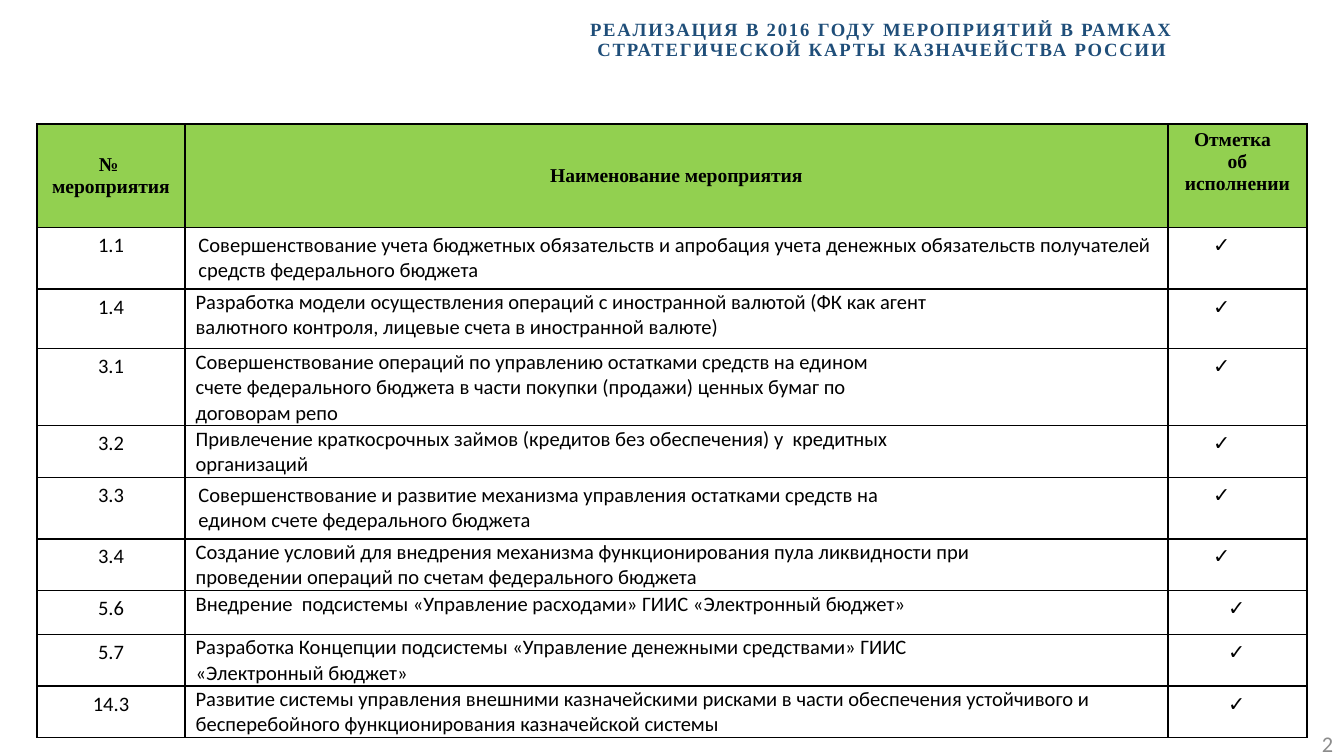
from dataclasses import dataclass

from lxml import etree
from pptx import Presentation
from pptx.dml.color import RGBColor
from pptx.enum.text import MSO_ANCHOR, PP_ALIGN
from pptx.oxml.ns import qn
from pptx.util import Pt

LEFT, CENTER, RIGHT, JUSTIFY = PP_ALIGN.LEFT, PP_ALIGN.CENTER, PP_ALIGN.RIGHT, PP_ALIGN.JUSTIFY
TOP, MIDDLE = MSO_ANCHOR.TOP, MSO_ANCHOR.MIDDLE


@dataclass(frozen=True)
class Theme:
    heading_font: str = "Times New Roman"
    body_font: str = "Calibri"
    title_color: str = "1F4E79"
    text_color: str = "000000"
    number_color: str = "8C8C8C"
    header_fill: str = "92D050"
    title_size: float = 10
    header_size: float = 10.5
    body_size: float = 11
    number_size: float = 12


THEME = Theme()

TITLE = "РЕАЛИЗАЦИЯ В 2016 ГОДУ МЕРОПРИЯТИЙ В РАМКАХ СТРАТЕГИЧЕСКОЙ КАРТЫ КАЗНАЧЕЙСТВА РОССИИ"
PAGE_NUMBER = "2"
CHECK = "✓"

# Header lines and vertical anchor
HEADERS = [
    (["№ ", "мероприятия"], MIDDLE),
    (["Наименование мероприятия"], MIDDLE),
    (["Отметка  ", "об исполнении"], TOP),
]
HEADER_HEIGHT = 55.5
COLUMN_WIDTHS = [79.2, 526.6, 74.4]

WIDE = (7.2, 2.9, 7.2, 2.9)       # cell margins: left, top, right, bottom
TIGHT = (5.7, 0.5, 0.7, 0)
NEAR, FAR = 17, 25                # indents of the check bullet
BULLET_GAP = 13.5

# Number, lines of the name, alignment, name margins, check indent, row height
ACTIVITIES = [
    ("1.1", ["Совершенствование учета бюджетных обязательств и апробация учета денежных "
             "обязательств получателей средств федерального бюджета"], LEFT, WIDE, NEAR, 32),
    ("1.4", ["Разработка модели осуществления операций с иностранной валютой (ФК как агент",
             "валютного контроля, лицевые счета в иностранной валюте)"], LEFT, TIGHT, NEAR, 32),
    ("3.1", ["Совершенствование операций по управлению остатками средств на едином ",
             "счете федерального бюджета в части покупки (продажи) ценных бумаг по ",
             "договорам репо "], JUSTIFY, TIGHT, NEAR, 40.5),
    ("3.2", ["Привлечение краткосрочных займов (кредитов без обеспечения) у  кредитных",
             "организаций "], JUSTIFY, TIGHT, NEAR, 27.4),
    ("3.3", ["Совершенствование и развитие механизма управления остатками средств на ",
             "едином счете федерального бюджета"], JUSTIFY, WIDE, NEAR, 29),
    ("3.4", ["Создание условий для внедрения механизма функционирования пула ликвидности при ",
             "проведении операций по счетам федерального бюджета "], JUSTIFY, TIGHT, NEAR, 27.4),
    ("5.6", ["Внедрение  подсистемы «Управление расходами» ГИИС «Электронный бюджет»"],
     JUSTIFY, TIGHT, FAR, 23.5),
    ("5.7", ["Разработка Концепции подсистемы «Управление денежными средствами» ГИИС  ",
             "«Электронный бюджет» "], JUSTIFY, TIGHT, FAR, 27.4),
    ("14.3", ["Развитие системы управления внешними казначейскими рисками в части обеспечения "
              "устойчивого и", "бесперебойного функционирования казначейской системы "],
     JUSTIFY, TIGHT, FAR, 27.4),
]


def add_check_bullet(paragraph, indent):
    properties = paragraph._p.get_or_add_pPr()
    properties.set("marL", str(Pt(indent + BULLET_GAP)))
    properties.set("indent", str(-Pt(BULLET_GAP)))
    etree.SubElement(properties, qn("a:buFont"), typeface=THEME.body_font)
    etree.SubElement(properties, qn("a:buChar"), char=CHECK)


def write_text(frame, lines, *, size=THEME.body_size, font=THEME.body_font,
               color=THEME.text_color, bold=False, align=CENTER, line_spacing=None,
               tracking=None, check_indent=None):
    for index, line in enumerate(lines):
        paragraph = frame.paragraphs[0] if index == 0 else frame.add_paragraph()
        paragraph.alignment = align
        paragraph.line_spacing = line_spacing
        if check_indent is not None:
            add_check_bullet(paragraph, check_indent)
        run = paragraph.add_run()
        run.text = line
        run.font.size = Pt(size)
        run.font.name = font
        run.font.bold = bold
        run.font.color.rgb = RGBColor.from_string(color)
        if tracking:
            run.font._element.set("spc", str(tracking * 100))


def set_margins(target, margins):
    target.margin_left, target.margin_top, target.margin_right, target.margin_bottom = map(Pt, margins)


def add_borders(cell):
    """Draw the four edges; they must precede the fill in the cell properties."""
    properties = cell._tc.get_or_add_tcPr()
    for position, side in enumerate(("lnL", "lnR", "lnT", "lnB")):
        line = etree.Element(qn(f"a:{side}"), w=str(Pt(1)))
        fill = etree.SubElement(line, qn("a:solidFill"))
        etree.SubElement(fill, qn("a:srgbClr"), val=THEME.text_color)
        properties.insert(position, line)


def fill_cell(cell, lines, margins=WIDE, anchor=TOP, fill=None, **text_format):
    set_margins(cell, margins)
    cell.vertical_anchor = anchor
    if fill:
        cell.fill.solid()
        cell.fill.fore_color.rgb = RGBColor.from_string(fill)
    else:
        cell.fill.background()
    add_borders(cell)
    write_text(cell.text_frame, lines, **text_format)


def add_title(slide):
    title = slide.shapes.title
    title.left, title.top, title.width, title.height = Pt(269.3), Pt(0), Pt(406), Pt(43)
    frame = title.text_frame
    frame.word_wrap = True
    frame.vertical_anchor = MIDDLE
    set_margins(frame, (14, 3.6, 14, 3.6))
    write_text(frame, [TITLE], size=THEME.title_size, font=THEME.heading_font,
               color=THEME.title_color, bold=True, line_spacing=0.9, tracking=1)


def add_activity_table(slide):
    heights = [HEADER_HEIGHT] + [activity[-1] for activity in ACTIVITIES]
    table = slide.shapes.add_table(len(heights), len(COLUMN_WIDTHS), Pt(19.9), Pt(66.4),
                                   Pt(sum(COLUMN_WIDTHS)), Pt(sum(heights))).table
    table.horz_banding = False
    for column, width in zip(table.columns, COLUMN_WIDTHS):
        column.width = Pt(width)
    for row, height in zip(table.rows, heights):
        row.height = Pt(height)
    for column, (lines, anchor) in enumerate(HEADERS):
        fill_cell(table.cell(0, column), lines, anchor=anchor, fill=THEME.header_fill,
                  size=THEME.header_size, font=THEME.heading_font, bold=True)
    for row, (number, name, align, margins, check_indent, _) in enumerate(ACTIVITIES, start=1):
        fill_cell(table.cell(row, 0), [number])
        fill_cell(table.cell(row, 1), name, margins, align=align)
        # A bullet is drawn only beside a run, so the mark's paragraph holds one space
        fill_cell(table.cell(row, 2), [" "], align=LEFT, check_indent=check_indent)


def add_page_number(slide):
    frame = slide.shapes.add_textbox(Pt(620.6), Pt(391), Pt(100.8), Pt(14.4)).text_frame
    frame.word_wrap = True
    frame.vertical_anchor = MIDDLE
    write_text(frame, [PAGE_NUMBER], size=THEME.number_size, color=THEME.number_color, align=RIGHT)


def main():
    presentation = Presentation()
    presentation.slide_width, presentation.slide_height = Pt(720), Pt(405)
    slide = presentation.slides.add_slide(presentation.slide_layouts[5])
    add_title(slide)
    add_activity_table(slide)
    add_page_number(slide)
    presentation.save("out.pptx")


if __name__ == "__main__":
    main()
